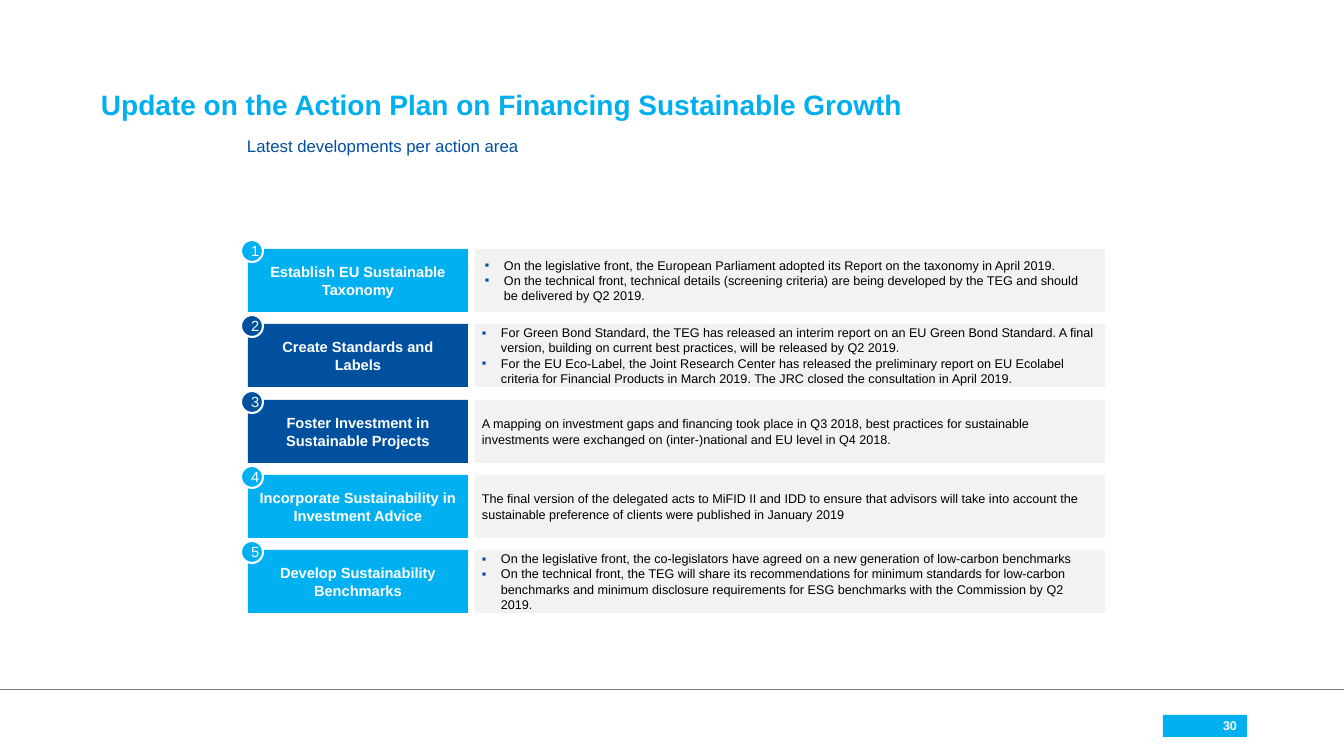
from lxml.etree import SubElement
from pptx import Presentation
from pptx.dml.color import RGBColor
from pptx.enum.shapes import MSO_CONNECTOR as LINK, MSO_SHAPE as SHAPE
from pptx.enum.text import MSO_ANCHOR as ANCHOR, PP_ALIGN as ALIGN
from pptx.oxml.ns import qn
from pptx.util import Pt

PX = 914400 / 100.8
SKY = RGBColor(0x00, 0xAF, 0xF0)
CYAN = RGBColor(0x00, 0xB0, 0xF0)
NAVY = RGBColor(0x00, 0x50, 0xA0)
PALE = RGBColor(0xF2, 0xF2, 0xF2)
GRAY = RGBColor(0x7F, 0x7F, 0x7F)
WHITE = RGBColor(0xFF, 0xFF, 0xFF)
BLACK = RGBColor(0x00, 0x00, 0x00)


def px(*vals):
    return [round(v * PX) for v in vals]


def put(text, box, kind=None, fill=None, edge=None, size=9, color=BLACK, bold=False,
        align=ALIGN.LEFT, anchor=ANCHOR.MIDDLE, pad=(10, 5), space=None, bullet=False):
    """Place text, one paragraph per line, in a text box or in a filled shape."""
    if kind is None:
        shape = slide.shapes.add_textbox(*px(*box))
    else:
        shape = slide.shapes.add_shape(kind, *px(*box))
        shape.shadow.inherit = False
        shape.fill.solid()
        shape.fill.fore_color.rgb = fill
        if edge is None:
            shape.line.fill.background()
        else:
            shape.line.color.rgb = edge
            shape.line.width = Pt(1.5)
    frame = shape.text_frame
    frame.word_wrap = True
    frame.vertical_anchor = anchor
    frame.margin_left = frame.margin_right = px(pad[0])[0]
    frame.margin_top = frame.margin_bottom = px(pad[1])[0]
    frame.text = text
    for para in frame.paragraphs:
        para.alignment = align
        if space:
            para.line_spacing = space
        if bullet:
            props = para._p.get_or_add_pPr()
            dent = px(19)[0]
            props.set("marL", str(dent))
            props.set("indent", str(-dent))
            tint = SubElement(props, qn("a:buClr"))
            SubElement(tint, qn("a:srgbClr"), val=str(NAVY))
            SubElement(props, qn("a:buFont"), typeface="Arial")
            SubElement(props, qn("a:buChar"), char="▪")
        for run in para.runs:
            run.font.name = "Arial"
            run.font.size = Pt(size)
            run.font.bold = bold
            run.font.color.rgb = color


deck = Presentation()
deck.slide_width, deck.slide_height = px(1344, 756)
slide = deck.slides.add_slide(deck.slide_layouts[6])

rule = slide.shapes.add_connector(LINK.STRAIGHT, *px(0, 689, 1344, 689))
rule.line.color.rgb = GRAY
rule.line.width = Pt(0.5)
SubElement(rule._element.spPr, qn("a:effectLst"))

put("30", (1163, 715, 84, 22), SHAPE.RECTANGLE, SKY, color=WHITE, bold=True,
    align=ALIGN.RIGHT)
put("Update on the Action Plan on Financing Sustainable Growth", (91, 72, 1155, 55),
    size=20, color=SKY, bold=True, anchor=ANCHOR.BOTTOM, space=0.9)
put("Latest developments per action area", (237, 133, 867, 46),
    size=12, color=NAVY, anchor=ANCHOR.TOP, space=0.9)

SLIM = (7, 4)
WIDE = (10, 5)
rows = [
    ("Establish EU Sustainable Taxonomy", CYAN, WIDE,
     "On the legislative front, the European Parliament adopted its Report on the taxonomy "
     "in April 2019.\n"
     "On the technical front, technical details (screening criteria) are being developed by "
     "the TEG and should be delivered by Q2 2019."),
    ("Create Standards and Labels", NAVY, SLIM,
     "For Green Bond Standard, the TEG has released an interim report on an EU Green Bond "
     "Standard. A final version, building on current best practices, will be released by "
     "Q2 2019.\n"
     "For the EU Eco-Label, the Joint Research Center has released the preliminary report on "
     "EU Ecolabel criteria for Financial Products in March 2019. The JRC closed the "
     "consultation in April 2019."),
    ("Foster Investment in Sustainable Projects", NAVY, SLIM,
     "A mapping on investment gaps and financing took place in Q3 2018, best practices for "
     "sustainable investments were exchanged on (inter-)national and EU level in Q4 2018."),
    ("Incorporate Sustainability in Investment Advice", CYAN, SLIM,
     "The final version of the delegated acts to MiFID II and IDD to ensure that advisors "
     "will take into account the sustainable preference of clients were published in "
     "January 2019"),
    ("Develop Sustainability Benchmarks", CYAN, SLIM,
     "On the legislative front, the co-legislators have agreed on a new generation of "
     "low-carbon benchmarks\n"
     "On the technical front, the TEG will share its recommendations for minimum standards "
     "for low-carbon benchmarks and minimum disclosure requirements for ESG benchmarks with "
     "the Commission by Q2 2019."),
]
TOP, LAST, HIGH = 249, 550, 63
step = (LAST - TOP) / (len(rows) - 1)

for i, (name, tone, pad, news) in enumerate(rows):
    top = round(TOP + i * step)
    put(news, (475, top, 630, HIGH), SHAPE.RECTANGLE, PALE, pad=pad, bullet="\n" in news)
    put(name, (248, top, 220, HIGH), SHAPE.RECTANGLE, tone, size=10.5, color=WHITE,
        bold=True, align=ALIGN.CENTER)
    put(str(i + 1), (241, top - 9, 22, 22), SHAPE.OVAL, tone, WHITE, size=10.5,
        color=WHITE, align=ALIGN.CENTER, pad=SLIM)

deck.save("out.pptx")
